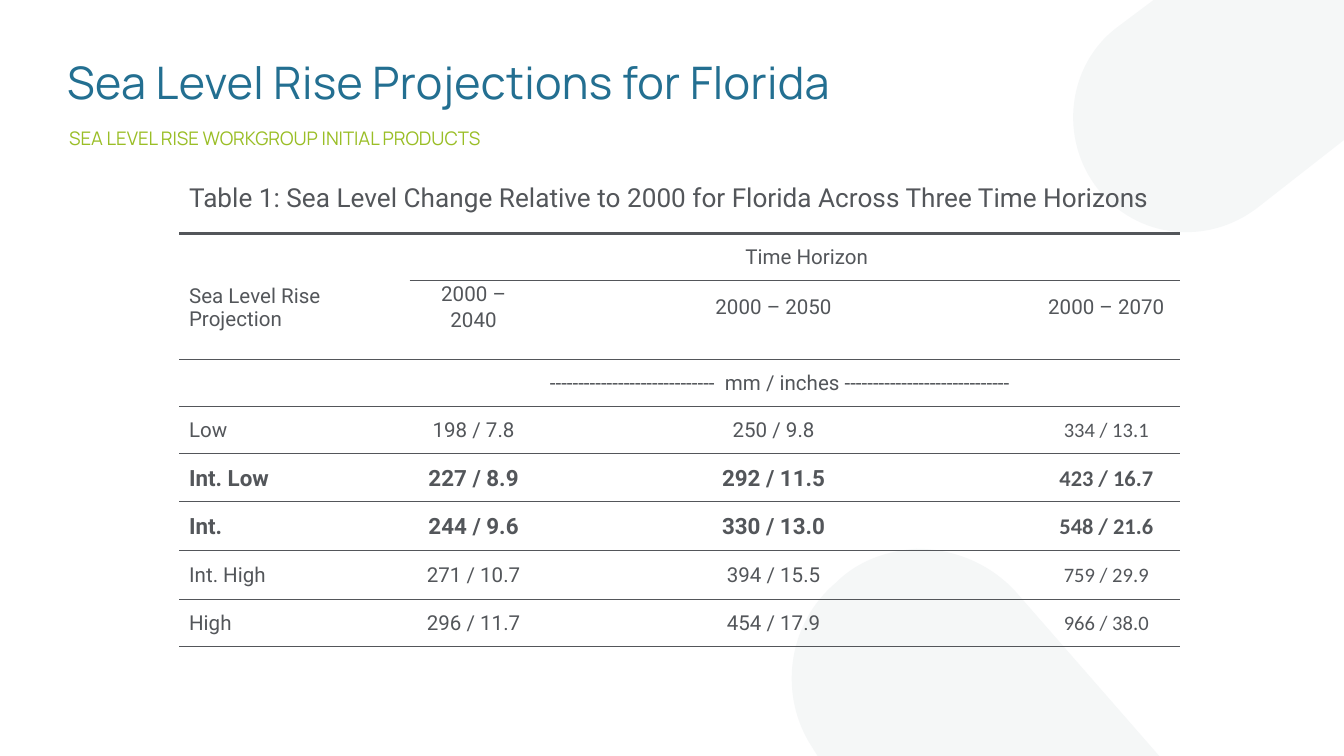
from dataclasses import dataclass, field
from itertools import chain

from lxml import etree
from pptx import Presentation
from pptx.dml.color import RGBColor
from pptx.enum.text import MSO_ANCHOR, PP_ALIGN
from pptx.oxml.ns import qn
from pptx.util import Pt

LEFT, CENTER = PP_ALIGN.LEFT, PP_ALIGN.CENTER
TOP, MIDDLE = MSO_ANCHOR.TOP, MSO_ANCHOR.MIDDLE
BLUE = RGBColor(0x23, 0x6F, 0x91)
GREEN = RGBColor(0x9A, 0xBE, 0x26)
GREY = RGBColor(0x53, 0x56, 0x5A)
PALE = RGBColor(0xD9, 0xE0, 0xE2)
NO_STYLE = "{2D5ABB26-0587-4C30-8999-92F81FD0307C}"

Point = tuple[float, float]


@dataclass
class Blob:
    """Outline whose segments are lines (1 point) or Bezier curves (3)."""
    start: Point
    segments: list[list[Point]]


@dataclass
class Label:
    text: str
    left: float
    top: float
    width: float
    height: float
    font: dict
    inset: float
    line_spacing: float
    tracking: float = 0


@dataclass
class Entry:
    """Table cell content with its span, alignment, margins and indent."""
    row: int
    col: int
    text: str
    align: PP_ALIGN = CENTER
    span: tuple[int, int] = (1, 1)
    anchor: MSO_ANCHOR = MIDDLE
    line_spacing: float = 1.07
    font: dict = field(default_factory=dict)
    margins: dict = field(default_factory=dict)
    indent: float = 0


BLOBS = [
    Blob((491, 294.5), [
        [(511, 294), (531, 302), (545, 318)], [(621, 405)], [(438, 405)],
        [(432.7, 397.4)], [(417, 369.4), (422.6, 333.4), (447.8, 311.8)],
        [(460, 300), (476, 295), (491, 294.5)]]),
    Blob((720, 0), [
        [(720, 75)], [(674, 111)], [(647, 132), (609, 127.5), (588, 101)],
        [(567, 74), (572.5, 35), (598, 15)], [(618, 0)]]),
]

LABELS = [
    Label("Sea Level Rise Projections for Florida", 36, 32.4, 648, 54,
          {"name": "Manrope", "size": Pt(24), "color": BLUE}, 0, 0.9, 0.2),
    Label("SEA LEVEL RISE WORKGROUP INITIAL PRODUCTS", 30, 62, 360, 35,
          {"name": "Manrope", "size": Pt(10), "color": GREEN}, 7.2, 1.2),
]

COL_WIDTHS = [123.5, 68.5, 66, 121, 78.5, 78.5]
ROW_HEIGHTS = [28, 25.3, 41.7, 25.2, 25.2, 26, 26, 26, 25.2]
VALUE_COLS = [1, 3, 5]
PERIODS = ["2000 – 2040", "2000 – 2050", "2000 – 2070"]
DASHES = "-" * 29
PROJECTIONS = [
    ("Low", "198 / 7.8", "250 / 9.8", "334 / 13.1"),
    ("Int. Low", "227 / 8.9", "292 / 11.5", "423 / 16.7"),
    ("Int.", "244 / 9.6", "330 / 13.0", "548 / 21.6"),
    ("Int. High", "271 / 10.7", "394 / 15.5", "759 / 29.9"),
    ("High", "296 / 11.7", "454 / 17.9", "966 / 38.0"),
]
HIGHLIGHTED = {"Int. Low", "Int."}


def format_font(font, values: dict) -> None:
    for name, value in values.items():
        if name == "color":
            font.color.rgb = value
        else:
            setattr(font, name, value)


def draw_blob(s, blob: Blob) -> None:
    builder = s.shapes.build_freeform(*blob.start, scale=Pt(1) / 1)
    builder.add_line_segments(list(chain(*blob.segments)), close=True)
    sp = builder.convert_to_shape()
    sp.shadow.inherit = False
    sp.line.fill.background()
    sp.fill.solid()
    sp.fill.fore_color.rgb = PALE
    props = sp._element.spPr
    color = props.find(f".//{qn('a:srgbClr')}")
    etree.SubElement(color, qn("a:alpha"), val="25000")
    # Join each run of three points into one curve
    steps = iter(props.findall(f".//{qn('a:lnTo')}"))
    for segment in blob.segments:
        step = next(steps)
        if len(segment) == 3:
            step.tag = qn("a:cubicBezTo")
            for _ in range(2):
                extra = next(steps)
                step.append(extra[0])
                extra.getparent().remove(extra)


def draw_label(s, label: Label) -> None:
    sp = s.shapes.add_textbox(Pt(label.left), Pt(label.top),
                              Pt(label.width), Pt(label.height))
    tf = sp.text_frame
    tf.word_wrap = True
    tf.margin_left = tf.margin_right = Pt(label.inset)
    tf.margin_top = tf.margin_bottom = Pt(label.inset / 2)
    p = tf.paragraphs[0]
    p.line_spacing = label.line_spacing
    r = p.add_run()
    r.text = label.text
    format_font(r.font, label.font)
    if label.tracking:
        r._r.get_or_add_rPr().set("spc", str(round(label.tracking * 100)))


def set_bottom_border(cell, width: float) -> None:
    ln = etree.Element(qn("a:lnB"), w=str(Pt(width)))
    fill = etree.SubElement(ln, qn("a:solidFill"))
    etree.SubElement(fill, qn("a:srgbClr"), val=str(GREY))
    cell._tc.get_or_add_tcPr().insert(0, ln)


def fill_entry(table, entry: Entry) -> None:
    cell = table.cell(entry.row, entry.col)
    rows, cols = entry.span
    if rows * cols > 1:
        cell.merge(table.cell(entry.row + rows - 1, entry.col + cols - 1))
    cell.vertical_anchor = entry.anchor
    for name, value in entry.margins.items():
        setattr(cell, name, value)
    tf = cell.text_frame
    tf.text = entry.text
    for p in tf.paragraphs:
        p.alignment = entry.align
        p.line_spacing = entry.line_spacing
        if entry.indent:
            p._p.get_or_add_pPr().set("marL", str(Pt(entry.indent)))
        for r in p.runs:
            format_font(r.font, {"name": "Roboto", "size": Pt(11),
                                 "color": GREY} | entry.font)


def table_entries() -> list[Entry]:
    # Caption and headings
    entries = [
        Entry(0, 0, "Table 1: Sea Level Change Relative to 2000 for Florida "
              "Across Three Time Horizons", LEFT, (1, 6), TOP,
              font={"size": Pt(14)}),
        Entry(1, 0, "Sea Level Rise\nProjection", LEFT, (2, 1),
              line_spacing=1, margins={"margin_top": Pt(12.5)}),
        Entry(1, 1, "Time Horizon", span=(1, 5), indent=13),
        Entry(3, 0, f"{DASHES}  mm / inches {DASHES}", span=(1, 6),
              indent=108),
    ]
    entries += [Entry(2, col, period, margins={"margin_bottom": Pt(14)})
                for col, period in zip(VALUE_COLS, PERIODS)]
    # Projections
    for row, (name, *values) in enumerate(PROJECTIONS, start=4):
        font = {"size": Pt(12), "bold": True} if name in HIGHLIGHTED else {}
        entries.append(Entry(row, 0, name, LEFT, font=font))
        for col, value in zip(VALUE_COLS, values):
            face = {"name": "Calibri"} if col == VALUE_COLS[-1] else {}
            entries.append(Entry(row, col, value, font=font | face))
    return entries


def draw_table(s) -> None:
    frame = s.shapes.add_table(len(ROW_HEIGHTS), len(COL_WIDTHS), Pt(96), Pt(97),
                               Pt(sum(COL_WIDTHS)), Pt(sum(ROW_HEIGHTS)))
    table = frame.table
    table._tbl.tblPr.find(qn("a:tableStyleId")).text = NO_STYLE
    table.first_row = table.horz_banding = False
    for column, width in zip(table.columns, COL_WIDTHS):
        column.width = Pt(width)
    for i, (row, height) in enumerate(zip(table.rows, ROW_HEIGHTS)):
        row.height = Pt(height)
        for cell in row.cells:
            cell.margin_left = cell.margin_right = Pt(5.3)
            cell.margin_top = cell.margin_bottom = Pt(0)
            cell.text_frame.paragraphs[0].font.size = Pt(11)
            cell.fill.background()
            set_bottom_border(cell, 1.5 if i == 0 else 0.5)
    for entry in table_entries():
        fill_entry(table, entry)


def main() -> None:
    prs = Presentation()
    prs.slide_width, prs.slide_height = Pt(720), Pt(405)
    s = prs.slides.add_slide(prs.slide_layouts[6])
    for blob in BLOBS:
        draw_blob(s, blob)
    for label in LABELS:
        draw_label(s, label)
    draw_table(s)
    prs.save("out.pptx")


if __name__ == "__main__":
    main()
